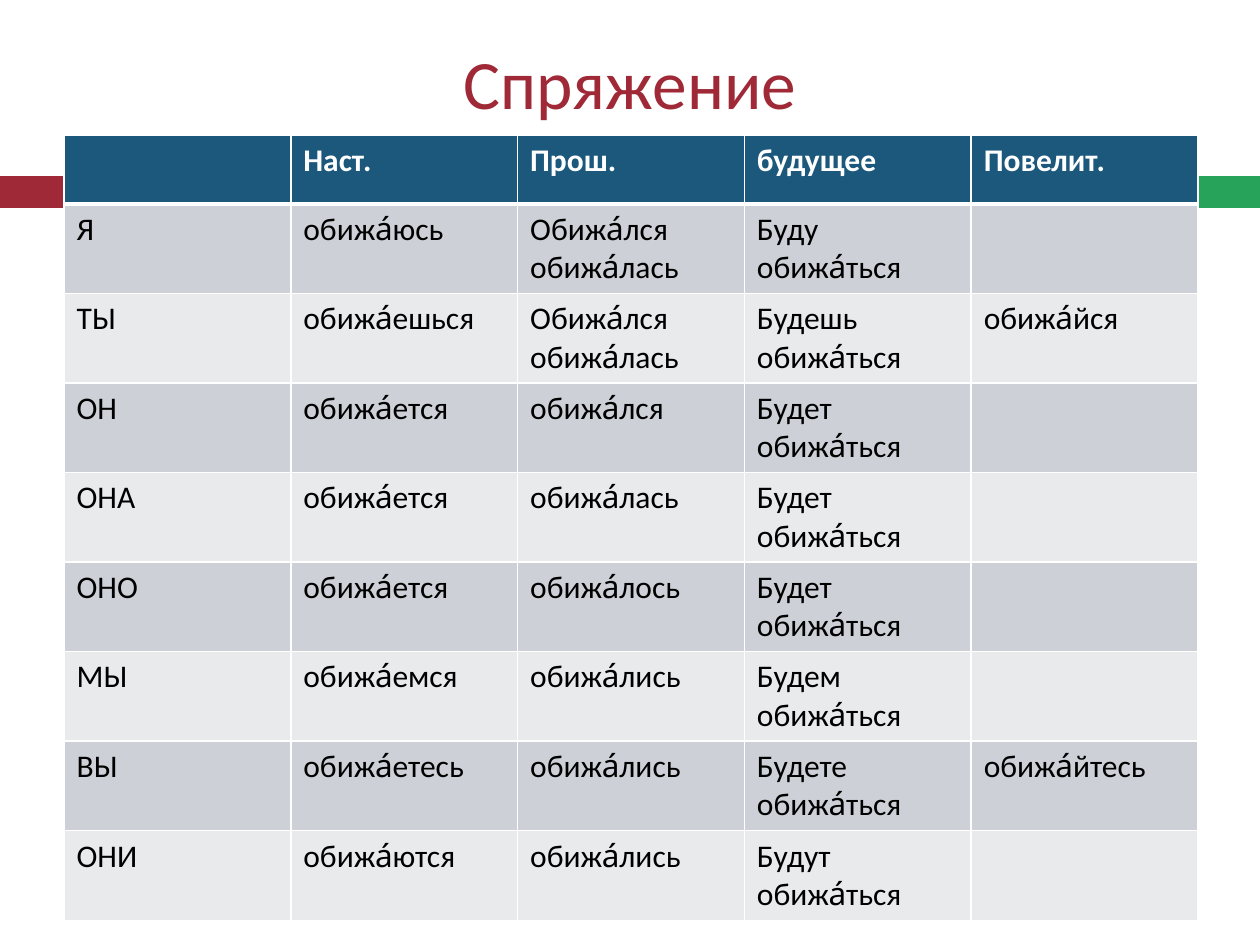
from lxml.etree import SubElement
from pptx import Presentation
from pptx.dml.color import RGBColor
from pptx.enum.shapes import MSO_SHAPE
from pptx.enum.text import MSO_ANCHOR, PP_ALIGN
from pptx.oxml.ns import qn
from pptx.util import Pt

EMU_PER_PX = 914400 / 126
COLORS = {
    "red": "9F2936",
    "green": "28A45A",
    "header": "1B587C",
    "odd": "CDD1D7",
    "even": "E8EAEC",
    "white": "FFFFFF",
    "black": "000000",
}

HEADINGS = ["", "Наст.", "Прош.", "будущее", "Повелит."]
# Pronoun, present, past, future auxiliary, imperative
CONJUGATION = [
    ("Я", "обижа́юсь", "Обижа́лся\nобижа́лась", "Буду", ""),
    ("ТЫ", "обижа́ешься", "Обижа́лся\nобижа́лась", "Будешь", "обижа́йся"),
    ("ОН", "обижа́ется", "обижа́лся", "Будет", ""),
    ("ОНА", "обижа́ется", "обижа́лась", "Будет", ""),
    ("ОНО", "обижа́ется", "обижа́лось", "Будет", ""),
    ("МЫ", "обижа́емся", "обижа́лись", "Будем", ""),
    ("ВЫ", "обижа́етесь", "обижа́лись", "Будете", "обижа́йтесь"),
    ("ОНИ", "обижа́ются", "обижа́лись", "Будут", ""),
]
INFINITIVE = "обижа́ться"


def px(length):
    return round(length * EMU_PER_PX)


def rgb(name):
    return RGBColor.from_string(COLORS[name])


class SlideBuilder:
    font_name = "Calibri"
    title_size = 39.6
    table_size = 18

    def __init__(self, slide):
        self.slide = slide

    def style(self, paragraph, size, color, bold=False):
        font = paragraph.font
        font.name, font.size, font.bold = self.font_name, Pt(size), bold
        font.color.rgb = rgb(color)

    def title(self, text, left, top, width, height):
        title = self.slide.shapes.title
        title.left, title.top = px(left), px(top)
        title.width, title.height = px(width), px(height)
        title.text = text
        title.text_frame.vertical_anchor = MSO_ANCHOR.MIDDLE
        heading = title.text_frame.paragraphs[0]
        heading.alignment = PP_ALIGN.CENTER
        self.style(heading, self.title_size, "red")

    def band(self, color, left, top, width, height):
        band = self.slide.shapes.add_shape(
            MSO_SHAPE.RECTANGLE, px(left), px(top), px(width), px(height))
        band.shadow.inherit = False
        band.fill.solid()
        band.fill.fore_color.rgb = rgb(color)
        band.line.fill.background()

    def borders(self, cell, top, bottom):
        """Draw white cell borders; top and bottom are widths in points."""
        properties = cell._tc.get_or_add_tcPr()
        for side, width in (("L", 1), ("R", 1), ("T", top), ("B", bottom)):
            line = SubElement(properties, qn(f"a:ln{side}"), w=str(Pt(width)))
            fill = SubElement(line, qn("a:solidFill"))
            SubElement(fill, qn("a:srgbClr"), val=COLORS["white"])

    def cell(self, cell, text, row):
        is_header = row == 0
        self.borders(cell, top=3 if row == 1 else 1, bottom=3 if is_header else 1)
        cell.fill.solid()
        cell.fill.fore_color.rgb = rgb(
            "header" if is_header else "odd" if row % 2 else "even")
        cell.text = text
        for paragraph in cell.text_frame.paragraphs:
            self.style(paragraph, self.table_size,
                       "white" if is_header else "black", is_header)

    def table(self, rows, left, top, width, height, row_height):
        """Rows start at row_height and grow to fit their text."""
        frame = self.slide.shapes.add_table(
            len(rows), len(rows[0]), px(left), px(top), px(width), px(height))
        for row, texts in enumerate(rows):
            frame.table.rows[row].height = px(row_height)
            for column, text in enumerate(texts):
                self.cell(frame.table.cell(row, column), text, row)
        frame.height = px(height)


def main():
    presentation = Presentation()
    presentation.slide_width, presentation.slide_height = px(1260), px(945)
    title_only = presentation.slide_layouts[5]
    builder = SlideBuilder(presentation.slides.add_slide(title_only))

    builder.band("red", 0, 176, 73, 32)
    builder.band("green", 82, 176, 1178, 32)
    builder.title("Cпряжение", 63, 38, 1134, 87)
    forms = [
        (pronoun, present, past, f"{auxiliary} {INFINITIVE}", imperative)
        for pronoun, present, past, auxiliary, imperative in CONJUGATION
    ]
    builder.table([HEADINGS, *forms], 64, 135, 1134, 775, row_height=69)
    presentation.save("out.pptx")


if __name__ == "__main__":
    main()
